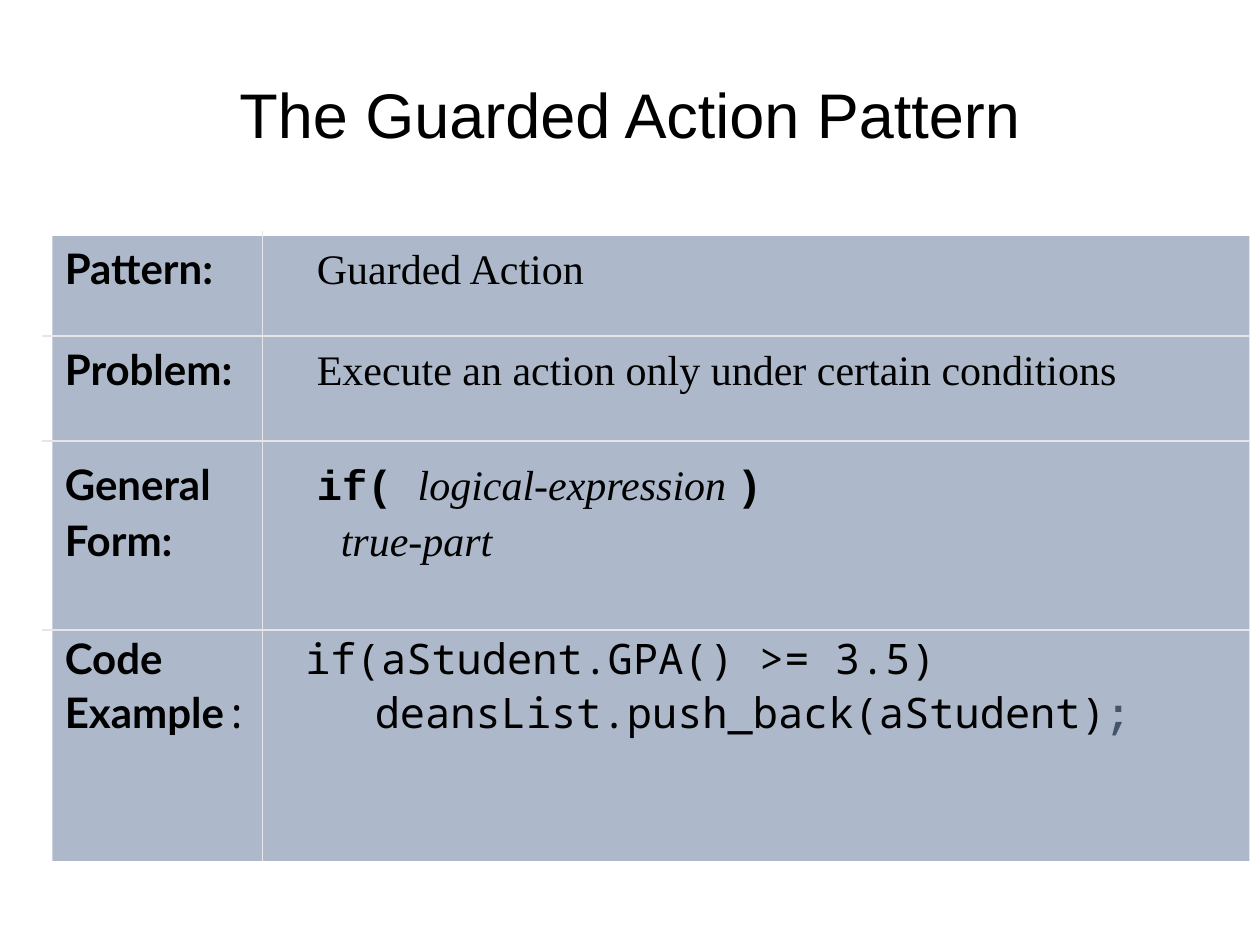
from lxml import etree
from pptx import Presentation
from pptx.dml.color import RGBColor
from pptx.enum.shapes import MSO_CONNECTOR, MSO_SHAPE
from pptx.enum.text import MSO_ANCHOR, PP_ALIGN
from pptx.oxml.ns import qn
from pptx.util import Inches, Pt

RECTANGLE = MSO_SHAPE.RECTANGLE
STRAIGHT = MSO_CONNECTOR.STRAIGHT
LEFT, CENTER = PP_ALIGN.LEFT, PP_ALIGN.CENTER
TOP, MIDDLE = MSO_ANCHOR.TOP, MSO_ANCHOR.MIDDLE

TITLE_ONLY = 5
CELL = 1 / 12  # grid of 120 columns by 90 rows, in inches
COLORS = {"text": "000000", "panel": "ADB9CA", "rule": "E7E6E6", "accent": "44546A"}
FORMATS = {
    "title": {"name": "Arial", "size": Pt(36), "bold": False},
    "label": {"name": "Lato", "size": Pt(24), "bold": True},
    "plain": {"name": "Times New Roman", "size": Pt(24), "bold": False},
    "term": {"name": "Times New Roman", "size": Pt(24), "bold": False, "italic": True},
    "keyword": {"name": "Courier New", "size": Pt(24), "bold": True},
    "code": {"name": "Noto Sans Mono", "size": Pt(24), "bold": False},
}

# Each line: space before (points), tab stop (inches), spans of (text, format, colour)
LINES = [
    (0, 2, [("Pattern:\t", "label", "text"), ("Guarded Action", "plain", "text")]),
    (28.7, 2, [("Problem:\t", "label", "text"),
               ("Execute an action only under certain conditions", "plain", "text")]),
    (36.4, 2, [("General\t", "label", "text"), ("if( ", "keyword", "text"),
               ("logical-expression ", "term", "text"), (")", "keyword", "text")]),
    (3.3, 2.19, [("Form:\t", "label", "text"), ("true-part", "term", "text")]),
    (38.5, 1.91, [("Code\t", "label", "text"),
                  ("if(aStudent.GPA() >= 3.5)", "code", "text")]),
    (1.9, 2.46, [("Example", "label", "text"),
                 (":\tdeansList.push_back(aStudent)", "code", "text"),
                 (";", "keyword", "accent")]),
]


def grid(*cells):
    return [Inches(cell * CELL) for cell in cells]


class SlideBuilder:
    def __init__(self, deck):
        self.page = deck.slides.add_slide(deck.slide_layouts[TITLE_ONLY])

    def color(self, name):
        return RGBColor.from_string(COLORS[name])

    def frame(self, box, anchor):
        frame = box.text_frame
        values = {"word_wrap": True, "vertical_anchor": anchor,
                  "margin_left": Inches(0.1), "margin_right": Inches(0.1),
                  "margin_top": Inches(0.05), "margin_bottom": Inches(0.05)}
        for key, value in values.items():
            setattr(frame, key, value)
        return frame

    def span(self, para, text, style, color):
        span = para.add_run()
        span.text = text
        for key, value in FORMATS[style].items():
            setattr(span.font, key, value)
        span.font.color.rgb = self.color(color)

    def title(self, text, left, top, width, height):
        box = self.page.shapes.title
        box.left, box.top, box.width, box.height = grid(left, top, width, height)
        para = self.frame(box, MIDDLE).paragraphs[0]
        para.alignment, para.line_spacing = CENTER, 0.9
        self.span(para, text, "title", "text")

    def panel(self, lines, *place):
        box = self.page.shapes.add_shape(RECTANGLE, *grid(*place))
        box.shadow.inherit = False
        box.fill.solid()
        box.fill.fore_color.rgb = self.color("panel")
        box.line.fill.background()
        frame = self.frame(box, TOP)
        for index, (gap, stop, spans) in enumerate(lines):
            para = frame.add_paragraph() if index else frame.paragraphs[0]
            para.alignment = LEFT
            para.line_spacing, para.space_before = Pt(29), Pt(gap)
            self.tab_stop(para, stop)
            for text, style, color in spans:
                self.span(para, text, style, color)

    def tab_stop(self, para, position):
        properties = para._p.get_or_add_pPr()
        stops = etree.SubElement(properties, qn("a:tabLst"))
        etree.SubElement(stops, qn("a:tab"), pos=str(Inches(position)), algn="l")

    def rule(self, *ends):
        line = self.page.shapes.add_connector(STRAIGHT, *grid(*ends))
        line.line.color.rgb = self.color("rule")
        line.line.width = Pt(1)
        etree.SubElement(line._element.spPr, qn("a:effectLst"))


def main():
    deck = Presentation()
    deck.slide_width, deck.slide_height = Inches(10), Inches(7.5)
    builder = SlideBuilder(deck)

    # Title and pattern description
    builder.title("The Guarded Action Pattern", 2, 2.5, 116, 17.5)
    builder.panel(LINES, 5, 22.5, 114, 59.5)

    # Column divider and row dividers
    builder.rule(25, 22, 25, 82)
    for row in (32, 42, 60):
        builder.rule(4, row, 119, row)

    deck.save("out.pptx")


if __name__ == "__main__":
    main()
